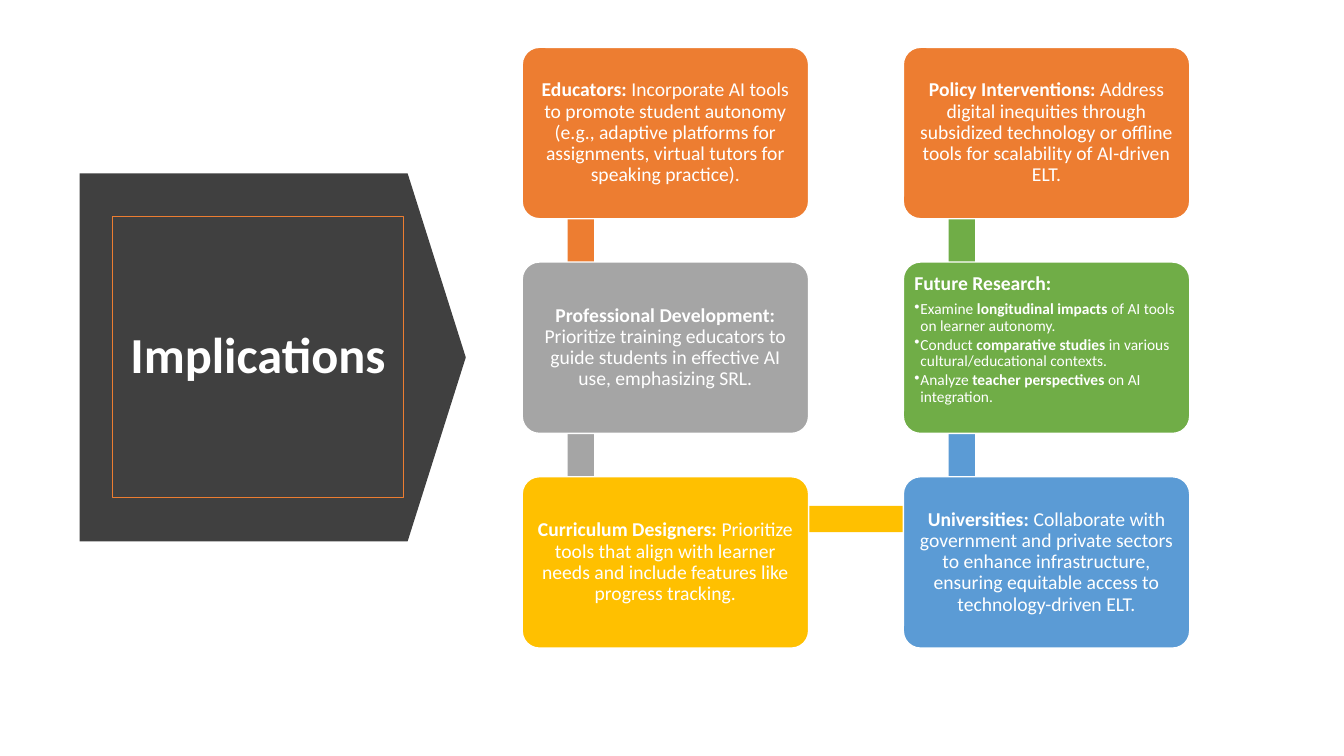
from pptx import Presentation, util as u
from pptx.dml.color import RGBColor
from pptx.enum import shapes, text
from lxml import etree

C = {"arrow": "404040", "white": "FFFFFF", "orange": "ED7D31", "grey": "A5A5A5",
     "gold": "FFC000", "blue": "5B9BD5", "green": "70AD47"}

prs = Presentation()
prs.slide_width, prs.slide_height = u.Inches(13.33), u.Inches(7.5)
s = prs.slides.add_slide(prs.slide_layouts[6])


def add_block(kind, x, y, w, h, fill=None, line=None, weight=1):
    sp = s.shapes.add_shape(kind, *[u.Inches(v) for v in (x, y, w, h)])
    sp.shadow.inherit = False
    if fill:
        sp.fill.solid()
        sp.fill.fore_color.rgb = RGBColor.from_string(C[fill])
    else:
        sp.fill.background()
    if line:
        sp.line.color.rgb = RGBColor.from_string(C[line])
        sp.line.width = u.Pt(weight)
    else:
        sp.line.fill.background()
    return sp


def add_runs(p, runs, size, align, after=0):
    p.alignment, p.line_spacing, p.space_after = align, 0.9, u.Pt(after)
    for words, bold in runs:
        r = p.add_run()
        r.text = words
        r.font.name, r.font.size, r.font.bold = "Calibri", u.Pt(size), bold
        r.font.color.rgb = RGBColor.from_string(C["white"])


LEFT, CENTER = text.PP_ALIGN.LEFT, text.PP_ALIGN.CENTER
RECT, ROUND = shapes.MSO_SHAPE.RECTANGLE, shapes.MSO_SHAPE.ROUNDED_RECTANGLE

# Title arrow and framed title
arrow = add_block(shapes.MSO_SHAPE.DOWN_ARROW, 0.88, 1.63, 3.65, 3.83, "arrow")
arrow.rotation = 270
arrow.adjustments[0], arrow.adjustments[1] = 1, 0.158
title = add_block(RECT, 1.12, 2.15, 2.88, 2.79, line="orange", weight=0.75)
title.text_frame.word_wrap = True
title.text_frame.vertical_anchor = text.MSO_ANCHOR.MIDDLE
add_runs(title.text_frame.paragraphs[0], [("Implications", True)], 36, CENTER)

# Grid of boxes: two columns, three rows
X0, Y0, DX, DY = 5.18, 0.47, 3.78, 2.13
BOX_W, BOX_H, BAR = 2.84, 1.7, 0.26

# Connecting bars: column, row above the bar, colour
for col, row, color in [(0, 0, "orange"), (0, 1, "grey"), (1, 1, "blue"), (1, 0, "green")]:
    add_block(RECT, X0 + col * DX + 0.45, Y0 + row * DY + 0.43, BAR, DY, color)
add_block(RECT, X0 + 0.59, Y0 + 2 * DY + 0.29, DX, BAR, "gold")

# Boxes: column, row, colour, heading, body
boxes = [
    (0, 0, "orange", "Educators:", " Incorporate AI tools to promote student autonomy (e.g., "
     "adaptive platforms for assignments, virtual tutors for speaking practice)."),
    (0, 1, "grey", "Professional Development:", " Prioritize training educators to guide "
     "students in effective AI use, emphasizing SRL."),
    (0, 2, "gold", "Curriculum Designers:", " Prioritize tools that align with learner needs "
     "and include features like progress tracking."),
    (1, 2, "blue", "Universities:", " Collaborate with government and private sectors to "
     "enhance infrastructure, ensuring equitable access to technology-driven ELT."),
    (1, 1, "green", "Future Research:", [
        ("Examine ", "longitudinal impacts", " of AI tools on learner autonomy."),
        ("Conduct ", "comparative studies", " in various cultural/educational contexts."),
        ("Analyze ", "teacher perspectives", " on AI integration.")]),
    (1, 0, "orange", "Policy Interventions:", " Address digital inequities through subsidized "
     "technology or offline tools for scalability of AI-driven ELT."),
]
for col, row, color, heading, body in boxes:
    sp = add_block(ROUND, X0 + col * DX, Y0 + row * DY, BOX_W, BOX_H, color, "white")
    sp.adjustments[0] = 0.1
    tf = sp.text_frame
    tf.word_wrap = True
    tf.margin_left = tf.margin_right = tf.margin_top = tf.margin_bottom = u.Inches(0.06)
    p = tf.paragraphs[0]
    if isinstance(body, str):
        tf.vertical_anchor = text.MSO_ANCHOR.MIDDLE
        add_runs(p, [(heading, True), (body, False)], 14, CENTER)
        continue
    tf.vertical_anchor = text.MSO_ANCHOR.TOP
    add_runs(p, [(heading, True)], 14, LEFT, 5)
    for before, key, after in body:
        p = tf.add_paragraph()
        p.level = 1
        add_runs(p, [(before, False), (key, True), (after, False)], 11, LEFT, 1.7)
        # Bullet with hanging indent
        pPr = p._p.get_or_add_pPr()
        pPr.set("marL", str(u.Inches(0.06)))
        pPr.set("indent", str(-u.Inches(0.06)))
        bullet = etree.SubElement(
            pPr, "{http://schemas.openxmlformats.org/drawingml/2006/main}buChar")
        bullet.set("char", "•")

prs.save("out.pptx")
